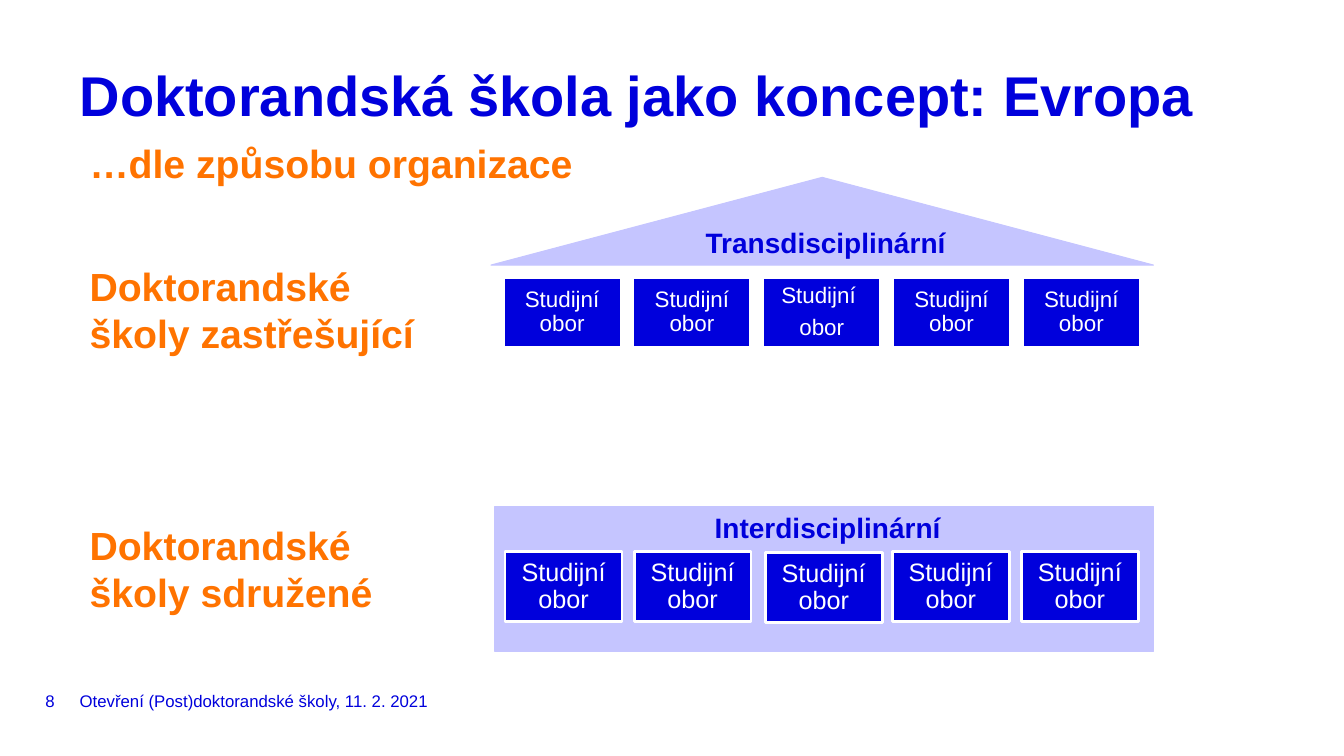
from pptx import Presentation
from pptx.dml.color import RGBColor
from pptx.enum.shapes import MSO_SHAPE as Shape
from pptx.enum.text import MSO_ANCHOR as Anchor, MSO_AUTO_SIZE as AutoSize, PP_ALIGN as Align
from pptx.util import Inches, Pt

COLORS = {"blue": "0000DC", "pale": "C5C5FF", "orange": "FF7300", "white": "FFFFFF"}
FONT = "Arial"


def color(name):
    """Return the named colour."""
    return RGBColor.from_string(COLORS[name])


def write(frame, text, size, tint="blue", bold=False, align=Align.LEFT, anchor=Anchor.TOP,
          inset=None, wrap=True, spacing=None, after=0):
    """Fill a text frame, one paragraph per line of text."""
    frame.word_wrap = wrap
    frame.auto_size = AutoSize.NONE
    frame.vertical_anchor = anchor
    if inset is not None:
        frame.margin_left = frame.margin_right = Inches(inset)
        frame.margin_top = frame.margin_bottom = Inches(inset)
    for index, line in enumerate(text.split("\n")):
        para = frame.add_paragraph() if index else frame.paragraphs[0]
        para.alignment = align
        para.space_before = Pt(0)
        para.space_after = Pt(after)
        if spacing:
            para.line_spacing = spacing
        span = para.add_run()
        span.text = line
        span.font.name = FONT
        span.font.size = Pt(size)
        span.font.bold = bold
        span.font.color.rgb = color(tint)


class SlideBuilder:
    """Holds the deck style and the current page."""

    def __init__(self):
        """Open a wide deck with one title-only page."""
        self.deck = Presentation()
        self.deck.slide_width = Inches(13.33)
        self.deck.slide_height = Inches(7.5)
        self.page = self.deck.slides.add_slide(self.deck.slide_layouts[5])

    def title(self, text, left, top, width, height):
        """Place and format the title placeholder."""
        box = self.page.shapes.title
        box.left, box.top = Inches(left), Inches(top)
        box.width, box.height = Inches(width), Inches(height)
        write(box.text_frame, text, 40, bold=True, inset=0, spacing=Pt(40))

    def text(self, text, left, top, width, height, size, **style):
        """Add a text box."""
        box = self.page.shapes.add_textbox(Inches(left), Inches(top), Inches(width), Inches(height))
        write(box.text_frame, text, size, **style)

    def shape(self, kind, left, top, width, height, fill="pale", line="pale", weight=0.75):
        """Add a filled preset shape."""
        box = self.page.shapes.add_shape(kind, Inches(left), Inches(top), Inches(width), Inches(height))
        box.shadow.inherit = False
        box.fill.solid()
        box.fill.fore_color.rgb = color(fill)
        box.line.color.rgb = color(line)
        box.line.width = Pt(weight)
        return box

    def field(self, text, left, top, width, size):
        """Add one study field box."""
        box = self.shape(Shape.RECTANGLE, left, top, width, 0.7, "blue", "white", 2)
        write(box.text_frame, text, size, "white", align=Align.CENTER, anchor=Anchor.MIDDLE,
              inset=0.07, spacing=0.9, after=6)


def main():
    """Build and save the slide."""
    slide = SlideBuilder()
    slide.title("Doktorandská škola jako koncept: Evropa", 0.79, 0.71, 11.76, 0.49)
    slide.shape(Shape.RECTANGLE, 4.91, 5.03, 6.53, 1.43)
    slide.shape(Shape.ISOSCELES_TRIANGLE, 4.87, 1.76, 6.57, 0.87)

    for index in range(5):
        middle = index == 2
        upper_text = "Studijní \nobor" if middle else "Studijní obor"
        slide.field(upper_text, 4.99 + 1.2875 * index, 2.75, 1.17, 16)
        nudge_x, nudge_y = (0.02, 0.01) if middle else (0, 0)
        slide.field("Studijní obor", 5.01 + 1.28 * index + nudge_x, 5.47 + nudge_y, 1.16, 18)

    heading = {"size": 28, "tint": "orange", "bold": True}
    slide.text("Doktorandské školy zastřešující", 0.79, 2.55, 3.53, 1.04, **heading)
    slide.text("Doktorandské školy sdružené", 0.79, 5.12, 3.77, 1.51, **heading)
    slide.text("…dle způsobu organizace", 0.79, 1.33, 5.05, 0.57, wrap=False, **heading)

    label = {"size": 20, "bold": True, "wrap": False}
    slide.text("Interdisciplinární", 6.99, 5.02, 2.46, 0.44, **label)
    slide.text("Transdisciplinární", 6.9, 2.19, 2.6, 0.44, **label)

    footer = {"size": 12, "anchor": Anchor.MIDDLE, "inset": 0}
    slide.text("Otevření (Post)doktorandské školy, 11. 2. 2021", 0.79, 6.81, 8.66, 0.28, **footer)
    slide.text("8", 0.45, 6.81, 0.28, 0.28, wrap=False, **footer)
    slide.deck.save("out.pptx")


if __name__ == "__main__":
    main()
